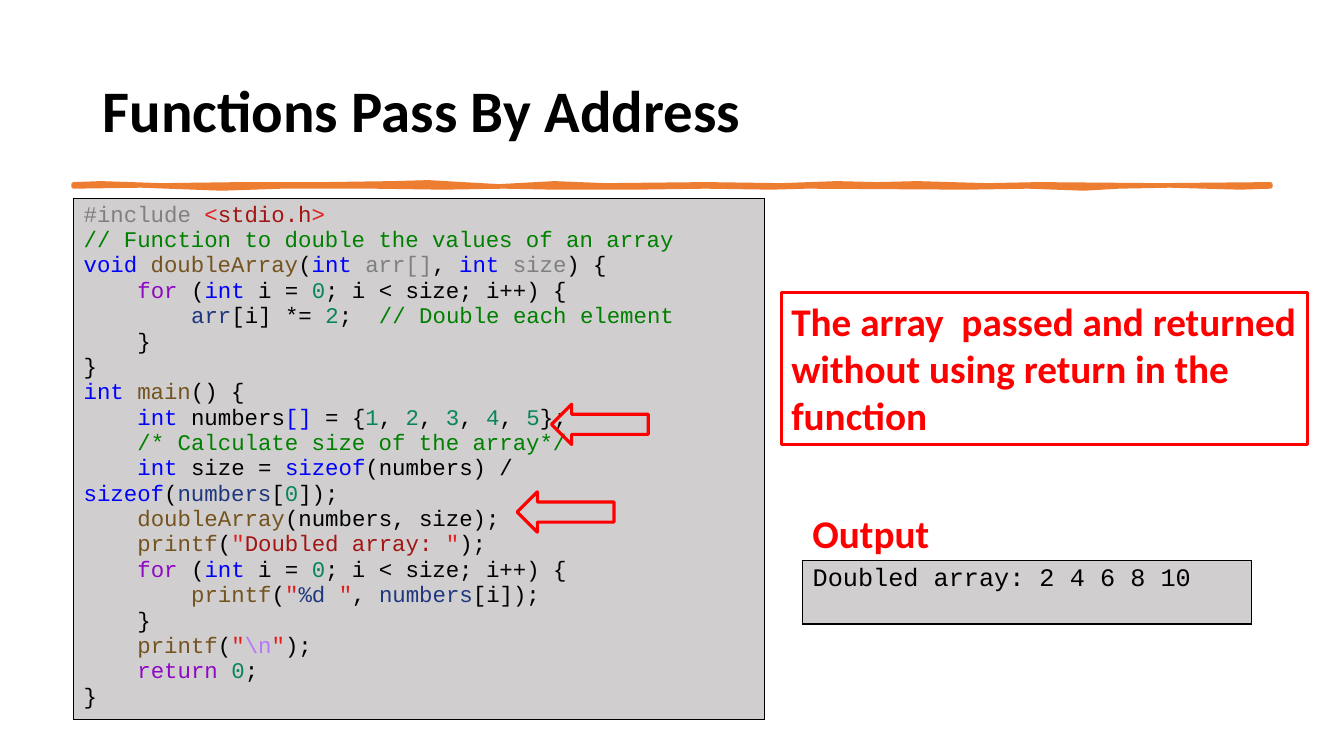
"""Builds the slide on passing an array by address in C."""
from lxml.etree import SubElement
from pptx import Presentation
from pptx.dml.color import RGBColor
from pptx.enum.shapes import MSO_SHAPE
from pptx.enum.text import MSO_ANCHOR, PP_ALIGN
from pptx.oxml.ns import qn
from pptx.util import Inches, Pt

COLORS = {
    "text": "000000", "accent": "ED7D31", "red": "FF0000", "panel": "D0CECE",
    "gray": "808080", "quote": "E21F1F", "string": "A31515", "comment": "008000",
    "type": "0000FF", "func": "74531F", "flow": "8F08C4", "num": "098658",
    "var": "1F377F", "escape": "B776FB",
}
TITLE = "Functions Pass By Address"
NOTE = "The array  passed and returned without using return in the function"
OUTPUT_LABEL = "Output"
OUTPUT = [(0, [("Doubled array: 2 4 6 8 10", "text")])]

FOR_LINE = (1, [("for", "flow"), (" (", "text"), ("int ", "type"), ("i = ", "text"),
                ("0", "num"), ("; i < size; i++) {", "text")])
CLOSE_BLOCK = (1, [("}", "text")])
CLOSE_FUNCTION = (0, [("}", "text")])
CODE = [
    (0, [("#include ", "gray"), ("<", "quote"), ("stdio.h", "string"), (">", "quote")]),
    (0, [("// Function to double the values of an array", "comment")]),
    (0, [("void ", "type"), ("doubleArray", "func"), ("(", "text"), ("int ", "type"),
         ("arr[]", "gray"), (", ", "text"), ("int ", "type"), ("size", "gray"),
         (") {", "text")]),
    FOR_LINE,
    (2, [("arr", "var"), ("[i] *= ", "text"), ("2", "num"), (";", "text"),
         ("  // Double each element", "comment")]),
    CLOSE_BLOCK,
    CLOSE_FUNCTION,
    (0, [("int ", "type"), ("main", "func"), ("() {", "text")]),
    (1, [("int", "type"), (" numbers", "text"), ("[]", "type"), (" = {", "text"),
         ("1", "num"), (", ", "text"), ("2", "num"), (", ", "text"), ("3", "num"),
         (", ", "text"), ("4", "num"), (", ", "text"), ("5", "num"), ("};", "text")]),
    (1, [("/* Calculate size of the array*/", "comment")]),
    (1, [("int", "type"), (" size = ", "text"), ("sizeof", "type"),
         ("(numbers) / ", "text"), ("sizeof", "type"), ("(", "text"),
         ("numbers", "var"), ("[", "text"), ("0", "num"), ("]);", "text")]),
    (1, [("doubleArray", "func"), ("(numbers, size);", "text")]),
    (1, [("printf", "func"), ("(", "text"), ('"', "quote"),
         ("Doubled array: ", "string"), ('"', "quote"), (");", "text")]),
    FOR_LINE,
    (2, [("printf", "func"), ("(", "text"), ('"', "quote"), ("%d ", "var"),
         ('"', "quote"), (", ", "text"), ("numbers", "var"), ("[i]);", "text")]),
    CLOSE_BLOCK,
    (1, [("printf", "func"), ("(", "text"), ('"', "quote"), ("\\n", "escape"),
         ('"', "quote"), (");", "text")]),
    (1, [("return ", "flow"), ("0", "num"), (";", "text")]),
    CLOSE_FUNCTION,
]
CODE_SIZE = 16
CHARS_PER_LEVEL = 4
COURIER_ADVANCE = 0.6

TABLES = [
    ((0.73, 1.97, 6.85, 5.17), CODE, CODE_SIZE),
    ((7.96, 5.56, 4.45, 0.63), OUTPUT, 18),
]
ARROWS = [(5.13, 4.88, 0.96, 0.4), (5.47, 4.01, 0.96, 0.4)]
BRUSH_TOP = [
    (0.73, 1.83), (1, 1.82), (1.6, 1.84), (2.4, 1.83), (3.2, 1.83), (3.9, 1.82),
    (4.25, 1.81), (4.59, 1.83), (4.95, 1.85), (5.5, 1.82), (6, 1.84), (7, 1.83),
    (7.75, 1.84), (8.3, 1.82), (8.7, 1.83), (9.1, 1.82), (9.43, 1.83), (9.8, 1.84),
    (10.3, 1.83), (11.5, 1.84), (12.6, 1.83),
]
BRUSH_BOTTOM = [
    (12.6, 1.85), (12.3, 1.86), (11.6, 1.84), (11.1, 1.85), (10.75, 1.87),
    (10.2, 1.85), (9.6, 1.86), (8, 1.85), (7.65, 1.86), (7, 1.85), (6.3, 1.86),
    (5.5, 1.86), (5, 1.85), (4.4, 1.86), (3.7, 1.85), (2.8, 1.85), (2.2, 1.87),
    (1.4, 1.84), (0.73, 1.85),
]


def rgb(name):
    return RGBColor.from_string(COLORS[name])


def box(at):
    return [Inches(v) for v in at]


def add_run(p, text, color, **fmt):
    r = p.add_run()
    r.text = text
    r.font.color.rgb = rgb(color)
    for key, value in fmt.items():
        setattr(r.font, key, value)


def add_heading(tf, text, color, size):
    tf.word_wrap = True
    p = tf.paragraphs[0]
    p.alignment = PP_ALIGN.LEFT
    add_run(p, text, color, size=Pt(size), name="Calibri", bold=True)
    return p


def outline(sp, color, width):
    sp.shadow.inherit = False
    sp.fill.background()
    sp.line.color.rgb = rgb(color)
    sp.line.width = Pt(width)


def add_border(cell):
    tcPr = cell._tc.get_or_add_tcPr()
    for i, side in enumerate(("lnL", "lnR", "lnT", "lnB")):
        ln = SubElement(tcPr, qn(f"a:{side}"), w=str(Pt(1)))
        tcPr.insert(i, ln)
        fill = SubElement(ln, qn("a:solidFill"))
        SubElement(fill, qn("a:srgbClr"), val=COLORS["text"])


def add_listing(s, at, lines, size):
    table = s.shapes.add_table(1, 1, *box(at)).table
    table.first_row = table.horz_banding = False
    cell = table.cell(0, 0)
    cell.fill.solid()
    cell.fill.fore_color.rgb = rgb("panel")
    add_border(cell)
    tf = cell.text_frame
    for i, (level, tokens) in enumerate(lines):
        p = tf.add_paragraph() if i else tf.paragraphs[0]
        pPr = p._p.get_or_add_pPr()
        pPr.set("marL", "0")
        pPr.set("indent", str(Pt(level * CHARS_PER_LEVEL * COURIER_ADVANCE * size)))
        for text, color in tokens:
            add_run(p, text, color, size=Pt(size), name="Courier New")


def add_brush(s):
    points = [box(point) for point in BRUSH_TOP + BRUSH_BOTTOM]
    builder = s.shapes.build_freeform(*points[0])
    builder.add_line_segments(points[1:], close=True)
    sp = builder.convert_to_shape()
    outline(sp, "accent", 3.25)
    sp.fill.solid()
    sp.fill.fore_color.rgb = rgb("accent")


def main():
    prs = Presentation()
    prs.slide_width, prs.slide_height = box((13.33, 7.5))
    s = prs.slides.add_slide(prs.slide_layouts[5])

    title = s.shapes.title
    title.left, title.top, title.width, title.height = box((0.92, 0.4, 11.5, 1.45))
    title.text_frame.vertical_anchor = MSO_ANCHOR.MIDDLE
    add_heading(title.text_frame, TITLE, "text", 42).line_spacing = 0.9

    add_brush(s)
    for at, lines, size in TABLES:
        add_listing(s, at, lines, size)

    label = s.shapes.add_textbox(*box((7.96, 5, 3.71, 0.57)))
    add_heading(label.text_frame, OUTPUT_LABEL, "red", 28)

    note = s.shapes.add_shape(MSO_SHAPE.RECTANGLE, *box((7.75, 2.9, 5.22, 1.51)))
    outline(note, "red", 2.25)
    note.text_frame.vertical_anchor = MSO_ANCHOR.TOP
    add_heading(note.text_frame, NOTE, "red", 28)

    for at in ARROWS:
        outline(s.shapes.add_shape(MSO_SHAPE.LEFT_ARROW, *box(at)), "red", 2.25)

    prs.save("out.pptx")


if __name__ == "__main__":
    main()
